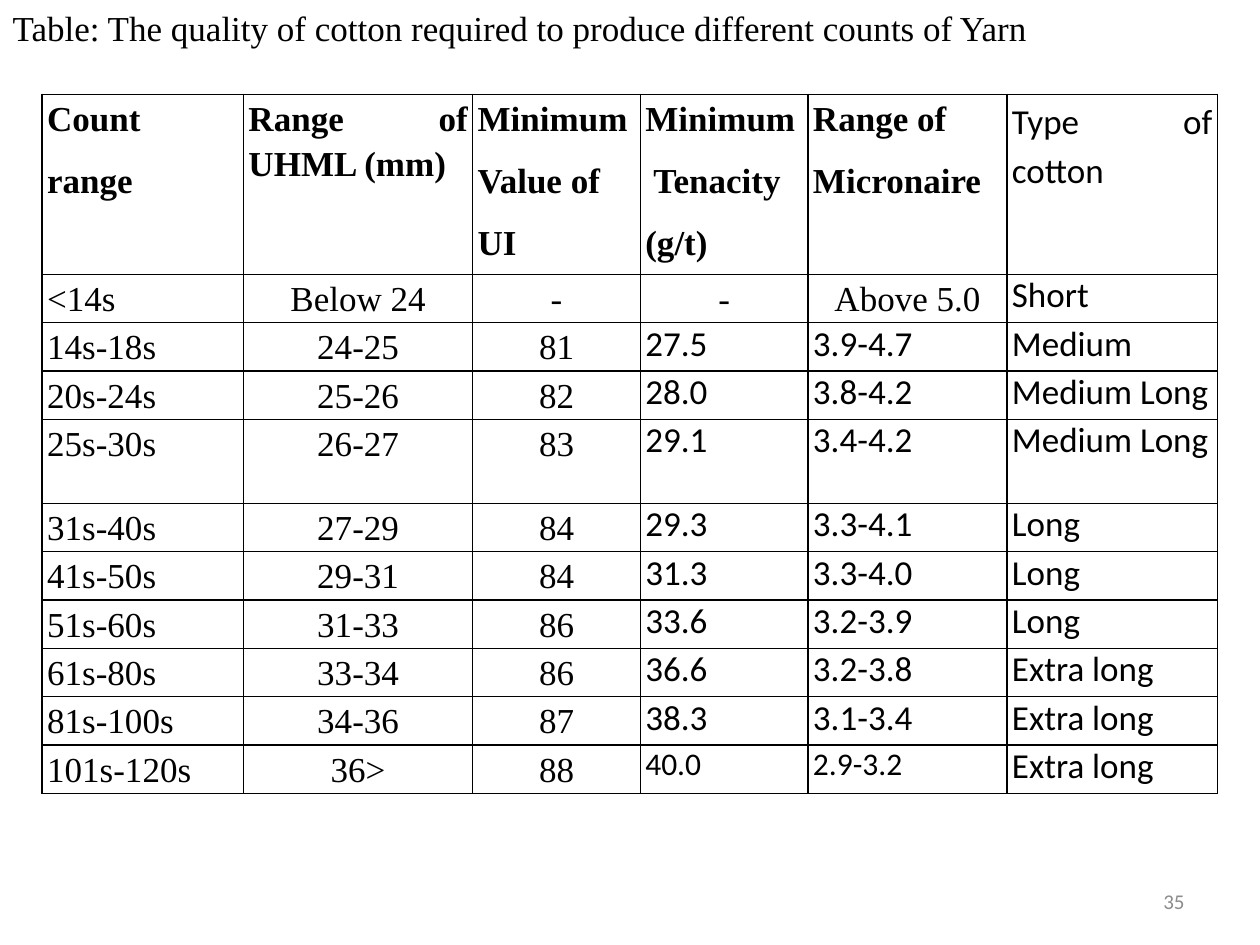
import pptx
import pptx.dml.color
import pptx.enum.text
import pptx.oxml
import pptx.oxml.ns
import pptx.util

Cm = pptx.util.Cm
Pt = pptx.util.Pt
ALIGN = pptx.enum.text.PP_ALIGN
ANCHOR = pptx.enum.text.MSO_ANCHOR

BLACK = pptx.dml.color.RGBColor(0x00, 0x00, 0x00)
GRAY = pptx.dml.color.RGBColor(0x8C, 0x8C, 0x8C)
SERIF = "Times New Roman"
SANS = "Calibri"

TITLE = "Table: The quality of cotton required to produce different counts of Yarn"
PAGE_NUMBER = "35"
HEADINGS = (
    "Count\nrange",
    "Range of UHML (mm)",
    "Minimum\nValue of \nUI",
    "Minimum\n Tenacity\n(g/t)",
    "Range of\nMicronaire",
    "Type of cotton",
)
COTTON_GRADES = [
    ("<14s", "Below 24", "-", "-", "Above 5.0", "Short"),
    ("14s-18s", "24-25", "81", "27.5", "3.9-4.7", "Medium"),
    ("20s-24s", "25-26", "82", "28.0", "3.8-4.2", "Medium Long"),
    ("25s-30s", "26-27", "83", "29.1", "3.4-4.2", "Medium Long"),
    ("31s-40s", "27-29", "84", "29.3", "3.3-4.1", "Long"),
    ("41s-50s", "29-31", "84", "31.3", "3.3-4.0", "Long"),
    ("51s-60s", "31-33", "86", "33.6", "3.2-3.9", "Long"),
    ("61s-80s", "33-34", "86", "36.6", "3.2-3.8", "Extra long"),
    ("81s-100s", "34-36", "87", "38.3", "3.1-3.4", "Extra long"),
    ("101s-120s", "36>", "88", "40.0", "2.9-3.2", "Extra long"),
]
COLUMN_WIDTHS = (4.06, 4.62, 3.38, 3.38, 4.01, 4.24)
HEADING_HEIGHT, GRADE_HEIGHT, TALL_HEIGHT = 3.63, 0.97, 1.69
TALL_ROW = 4
TYPE_COLUMN = 5


def format_paragraph(paragraph, align, font_name, size, color, bold=False):
    paragraph.alignment = align
    for run in paragraph.runs:
        run.font.name = font_name
        run.font.size = Pt(size)
        run.font.bold = bold
        run.font.color.rgb = color


def cell_style(row, column, last_row):
    if row == 0:
        is_type = column == TYPE_COLUMN
        return ALIGN.JUSTIFY, SANS if is_type else SERIF, 20, not is_type
    if column == 0:
        return ALIGN.JUSTIFY, SERIF, 20, False
    if column < 3 or (row == 1 and column < TYPE_COLUMN):
        return ALIGN.CENTER, SERIF, 20, False
    small = row == last_row and column < TYPE_COLUMN
    return ALIGN.LEFT, SANS, 18 if small else 20, False


def add_borders(cell):
    properties = cell._tc.get_or_add_tcPr()
    for position, side in enumerate(("lnL", "lnR", "lnT", "lnB")):
        properties.insert(position, pptx.oxml.parse_xml(
            f'<a:{side} {pptx.oxml.ns.nsdecls("a")} w="{Pt(1)}"><a:solidFill>'
            f'<a:srgbClr val="{BLACK}"/></a:solidFill></a:{side}>'))


def fill_cell(cell, text, align, font_name, size, bold):
    cell.margin_left = cell.margin_right = Cm(0.1)
    cell.margin_top = cell.margin_bottom = 0
    cell.fill.background()
    add_borders(cell)
    cell.text_frame.text = text
    for paragraph in cell.text_frame.paragraphs:
        format_paragraph(paragraph, align, font_name, size, BLACK, bold)
        if align != ALIGN.LEFT:
            paragraph.line_spacing = 1.15
            paragraph.space_after = Pt(10)


def add_grade_table(slide):
    rows = [HEADINGS] + COTTON_GRADES
    heights = [HEADING_HEIGHT] + [GRADE_HEIGHT] * len(COTTON_GRADES)
    heights[TALL_ROW] = TALL_HEIGHT
    table = slide.shapes.add_table(
        len(rows), len(HEADINGS), Cm(0.85), Cm(1.9),
        Cm(sum(COLUMN_WIDTHS)), Cm(sum(heights))).table
    table.first_row = table.horz_banding = False
    for column, width in zip(table.columns, COLUMN_WIDTHS):
        column.width = Cm(width)
    for r, (values, height) in enumerate(zip(rows, heights)):
        table.rows[r].height = Cm(height)
        for c, value in enumerate(values):
            fill_cell(table.cell(r, c), value, *cell_style(r, c, len(rows) - 1))


def main():
    deck = pptx.Presentation()
    deck.slide_width, deck.slide_height = Cm(25.4), Cm(19.05)
    slide = deck.slides.add_slide(deck.slide_layouts[5])

    title = slide.shapes.title
    title.left, title.top, title.width, title.height = Cm(0), Cm(0), Cm(21.11), Cm(1.11)
    title.text_frame.text = TITLE
    title.text_frame.word_wrap = False
    title.text_frame.auto_size = pptx.enum.text.MSO_AUTO_SIZE.SHAPE_TO_FIT_TEXT
    title.text_frame.vertical_anchor = ANCHOR.MIDDLE
    format_paragraph(title.text_frame.paragraphs[0], ALIGN.JUSTIFY, SERIF, 20, BLACK)

    add_grade_table(slide)

    page_number = slide.shapes.add_textbox(Cm(18.2), Cm(17.66), Cm(5.93), Cm(1.01))
    page_number.text_frame.text = PAGE_NUMBER
    page_number.text_frame.word_wrap = True
    page_number.text_frame.vertical_anchor = ANCHOR.MIDDLE
    format_paragraph(page_number.text_frame.paragraphs[0], ALIGN.RIGHT, SANS, 12, GRAY)

    deck.save("out.pptx")


if __name__ == "__main__":
    main()
